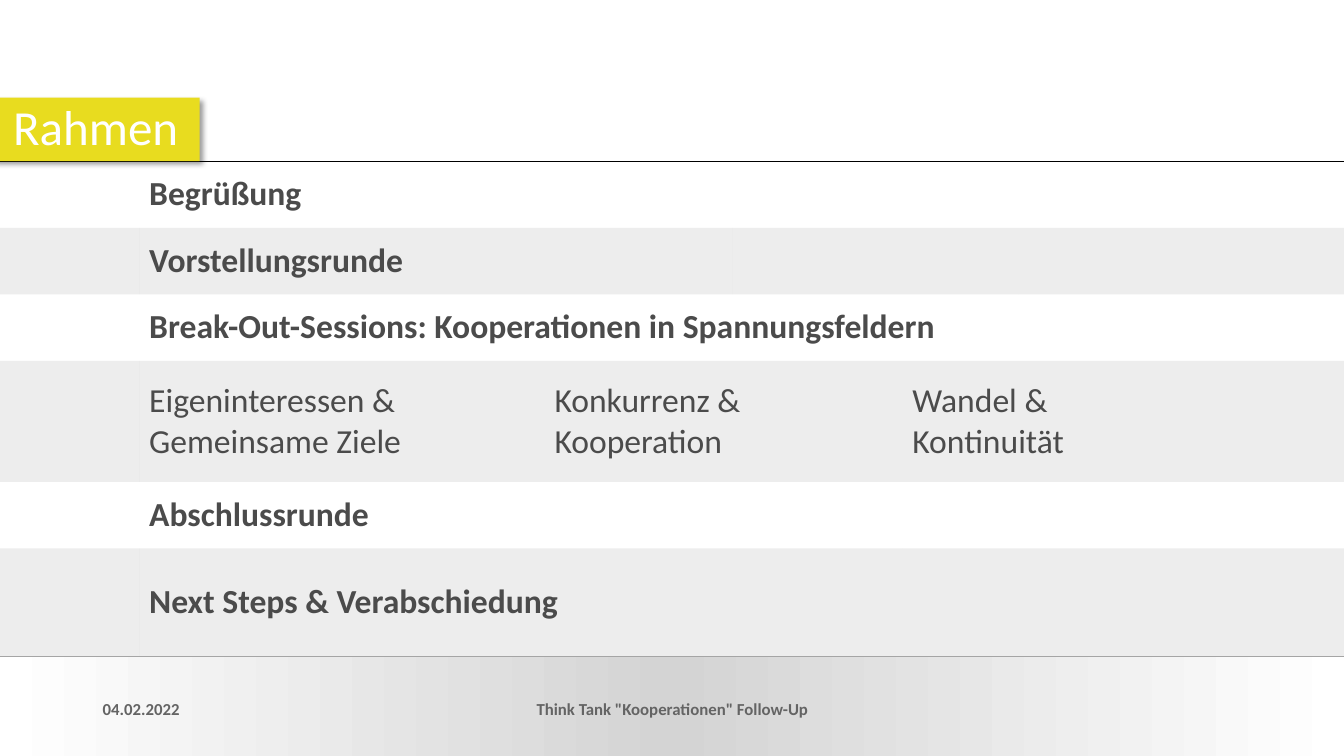
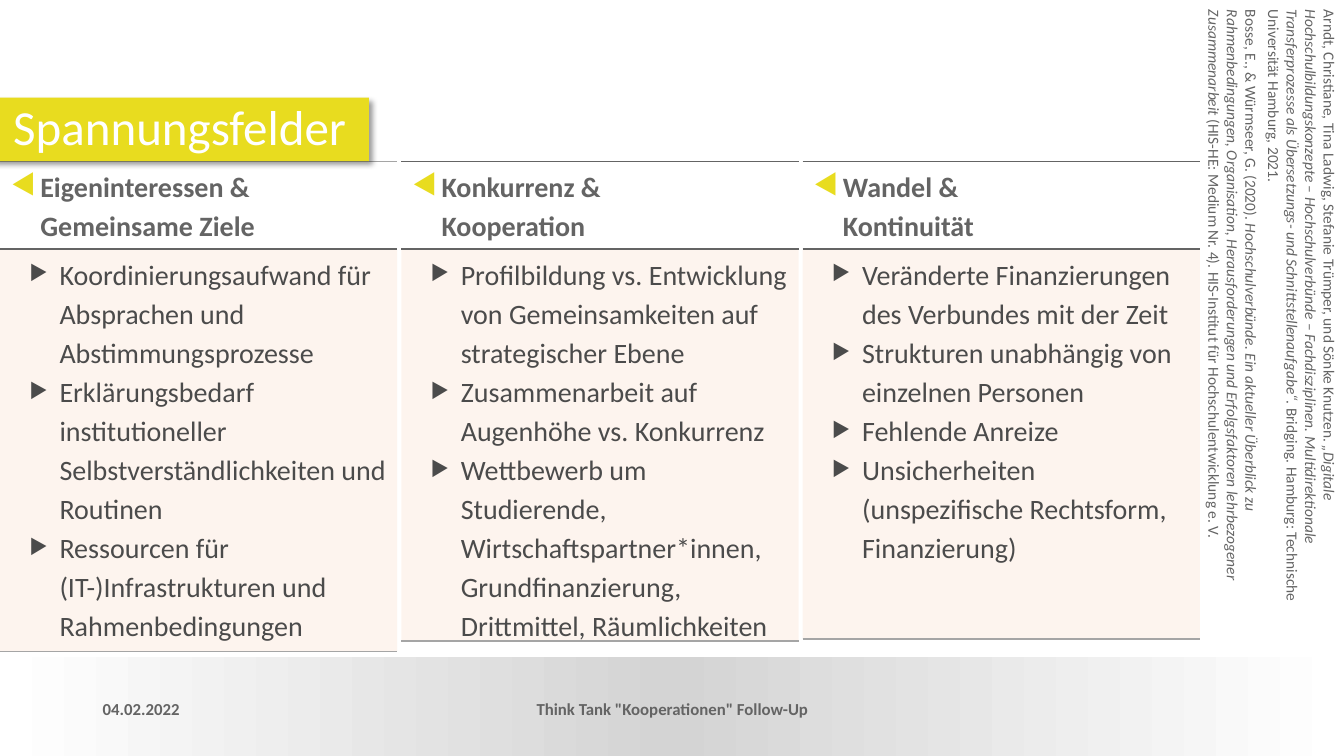
"""Build the two agenda and tension-field slides of the think tank follow-up."""
from lxml import etree
from pptx import Presentation
from pptx.dml.color import RGBColor
from pptx.enum.shapes import MSO_SHAPE
from pptx.enum.text import MSO_ANCHOR, PP_ALIGN
from pptx.oxml import parse_xml
from pptx.oxml.ns import nsdecls, qn
from pptx.util import Inches, Pt

RECTANGLE = MSO_SHAPE.RECTANGLE
MIDDLE, TOP = MSO_ANCHOR.MIDDLE, MSO_ANCHOR.TOP
LEFT, CENTER = PP_ALIGN.LEFT, PP_ALIGN.CENTER
BLANK_LAYOUT = 6
PLAIN_TABLE = "{2D5ABB26-0587-4C30-8999-92F81FD0307C}"

FONT = "Calibri"
WHITE, BLACK, YELLOW = "FFFFFF", "000000", "E8DC1F"
DARK, GREY, SILVER, PEACH = "4B4B4B", "646464", "A5A5A5", "F8CBAD"
BAND_GREY = "D4D4D4"
TINT = 20

DATE = "04.02.2022"
EVENT = 'Think Tank "Kooperationen" Follow-Up'

AGENDA_COLUMNS = [1.38, 4.02, 1.87, 1.68, 1.15, 3.23]
AGENDA = [
    (0.66, True, [1, 2, 2, 1], ["", "Begrüßung"]),
    (0.66, True, [1, 2, 2, 1], ["", "Vorstellungsrunde"]),
    (0.66, True, [1, 5], ["", "Break-Out-Sessions: Kooperationen in Spannungsfeldern"]),
    (1.2, False, [1, 1, 2, 2], ["", "Eigeninteressen & Gemeinsame Ziele",
                                "Konkurrenz & Kooperation", "Wandel &\nKontinuität"]),
    (0.66, True, [1, 1, 2, 2], ["", "Abschlussrunde"]),
    (1.07, True, [1, 3, 2], ["", "Next Steps & Verabschiedung"]),
]

FIELDS = [
    ("Eigeninteressen & Gemeinsame Ziele", SILVER, 3.99, [
        "Koordinierungsaufwand für Absprachen und Abstimmungsprozesse",
        "Erklärungsbedarf institutioneller Selbstverständlichkeiten und Routinen",
        "Ressourcen für (IT-)Infrastrukturen und Rahmenbedingungen"]),
    ("Konkurrenz &\nKooperation", GREY, 3.89, [
        "Profilbildung vs. Entwicklung von Gemeinsamkeiten auf strategischer Ebene",
        "Zusammenarbeit auf Augenhöhe vs. Konkurrenz",
        "Wettbewerb um Studierende, Wirtschaftspartner*innen, Grundfinanzierung, "
        "Drittmittel, Räumlichkeiten"]),
    ("Wandel &\nKontinuität", GREY, 3.87, [
        "Veränderte Finanzierungen des Verbundes mit der Zeit",
        "Strukturen unabhängig von einzelnen Personen",
        "Fehlende Anreize",
        "Unsicherheiten (unspezifische Rechtsform, Finanzierung)"]),
]

REFERENCES = [
    [("Arndt, Christiane, Tina Ladwig, Stefanie Trümper, und Sönke Knutzen. ", False),
     ("„Digitale Hochschulbildungskonzepte – Hochschulverbünde – Fachdisziplinen. "
      "Multidirektionale Transferprozesse als Übersetzungs- und Schnittstellenaufgabe“", True),
     (". Bridging. Hamburg: Technische Universität Hamburg, 2021.", False)],
    [("Bosse, E., & Würmseer, G. (2020). ", False),
     ("Hochschulverbünde. Ein aktueller Überblick zu Rahmenbedingungen, Organisation, "
      "Herausforderungen und Erfolgsfaktoren lehrbezogener Zusammenarbeit", True),
     (" (HIS-HE: Medium Nr. 4). HIS-Institut für Hochschulentwicklung e. V.", False)],
]


def rgb(value):
    return RGBColor.from_string(value)


def write(paragraph, text, size, color, bold=False, italic=False):
    for number, line in enumerate(text.split("\n")):
        if number:
            paragraph.add_line_break()
        run = paragraph.add_run()
        run.text = line
        font = run.font
        font.name, font.size = FONT, Pt(size)
        font.bold, font.italic = bold, italic
        font.color.rgb = rgb(color)


def set_bullet(paragraph, symbol, color, percent, indent):
    properties = paragraph._p.get_or_add_pPr()
    properties.set("marL", str(Inches(indent)))
    properties.set("indent", str(Inches(-0.3)))
    bullet_color = etree.SubElement(properties, qn("a:buClr"))
    etree.SubElement(bullet_color, qn("a:srgbClr")).set("val", color)
    etree.SubElement(properties, qn("a:buSzPct")).set("val", str(percent * 1000))
    etree.SubElement(properties, qn("a:buChar")).set("char", symbol)
    paragraph.line_spacing = 1.14


def style_cell(cell, tint=None, top=None, bottom=None):
    properties = cell._tc.get_or_add_tcPr()
    for tag, color in (("lnT", top), ("lnB", bottom)):
        if color:
            properties.append(parse_xml(
                f'<a:{tag} {nsdecls("a")} w="12700"><a:solidFill>'
                f'<a:srgbClr val="{color}"/></a:solidFill></a:{tag}>'))
    if tint:
        cell.fill.solid()
        cell.fill.fore_color.rgb = rgb(tint)
        color = properties.find(qn("a:solidFill")).find(qn("a:srgbClr"))
        etree.SubElement(color, qn("a:alpha")).set("val", str(TINT * 1000))
    else:
        cell.fill.background()


class Deck:
    def __init__(self):
        self.presentation = Presentation()
        self.presentation.slide_width = Inches(13.33)
        self.presentation.slide_height = Inches(7.5)
        self.slide = None

    def new_slide(self):
        layout = self.presentation.slide_layouts[BLANK_LAYOUT]
        self.slide = self.presentation.slides.add_slide(layout)
        self.footer()

    def rectangle(self, left, top, width, height):
        shape = self.slide.shapes.add_shape(
            RECTANGLE, Inches(left), Inches(top), Inches(width), Inches(height))
        shape.shadow.inherit = False
        shape.line.fill.background()
        return shape

    def text_box(self, left, top, width, height, anchor=TOP):
        box = self.slide.shapes.add_textbox(
            Inches(left), Inches(top), Inches(width), Inches(height))
        box.text_frame.word_wrap = True
        box.text_frame.vertical_anchor = anchor
        return box

    def footer(self):
        band = self.rectangle(0, 6.52, 13.33, 0.98)
        band.fill.gradient()
        band.fill.gradient_angle = 0
        stops = band._element.spPr.find(qn("a:gradFill")).find(qn("a:gsLst"))
        stops.clear()
        for position, color in ((0, WHITE), (50, BAND_GREY), (100, WHITE)):
            stop = etree.SubElement(stops, qn("a:gs"))
            stop.set("pos", str(position * 1000))
            etree.SubElement(stop, qn("a:srgbClr")).set("val", color)
        for text, left, width, align in ((DATE, 0.92, 3, LEFT), (EVENT, 4.8, 3.74, CENTER)):
            paragraph = self.text_box(left, 6.83, width, 0.4, MIDDLE).text_frame.paragraphs[0]
            paragraph.alignment = align
            write(paragraph, text, 12, GREY, bold=True)

    def title(self, text, width):
        label = self.rectangle(-0.07, 0.97, width, 0.63)
        label.fill.solid()
        label.fill.fore_color.rgb = rgb(YELLOW)
        label._element.spPr.find(qn("a:effectLst")).append(parse_xml(
            f'<a:outerShdw {nsdecls("a")} blurRad="50800" dist="38100" dir="2700000" '
            f'algn="tl" rotWithShape="0"><a:srgbClr val="{BLACK}">'
            '<a:alpha val="40000"/></a:srgbClr></a:outerShdw>'))
        frame = label.text_frame
        frame.word_wrap = True
        frame.vertical_anchor = MIDDLE
        frame.margin_left, frame.margin_right = Inches(0.2), Inches(0.1)
        paragraph = frame.paragraphs[0]
        paragraph.alignment = LEFT
        paragraph.line_spacing = 0.9
        write(paragraph, text, 35, WHITE)

    def table(self, left, top, widths, heights):
        frame = self.slide.shapes.add_table(
            len(heights), len(widths), Inches(left), Inches(top),
            Inches(sum(widths)), Inches(sum(heights)))
        next(frame._element.iter(qn("a:tableStyleId"))).text = PLAIN_TABLE
        table = frame.table
        table.first_row = table.horz_banding = False
        for column, width in zip(table.columns, widths):
            column.width = Inches(width)
        for row, height in zip(table.rows, heights):
            row.height = Inches(height)
        return table

    def agenda(self, rows):
        table = self.table(0, 1.6, AGENDA_COLUMNS, [row[0] for row in rows])
        last = len(rows) - 1
        for index, (_, bold, spans, texts) in enumerate(rows):
            for cell in table.rows[index].cells:
                style_cell(cell, SILVER if index % 2 else None,
                           BLACK if index == 0 else None,
                           SILVER if index == last else None)
            for number, span in enumerate(spans):
                start = sum(spans[:number])
                cell = table.cell(index, start)
                if span > 1:
                    cell.merge(table.cell(index, start + span - 1))
                cell.vertical_anchor = MIDDLE
                if number < len(texts) and texts[number]:
                    write(cell.text_frame.paragraphs[0], texts[number], 24, DARK, bold)

    def field(self, left, heading, top_color, body_height, points):
        table = self.table(left, 1.6, [3.94], [0.87, body_height])
        header, body = table.cell(0, 0), table.cell(1, 0)
        style_cell(header, top=top_color, bottom=GREY)
        style_cell(body, PEACH, GREY, SILVER)
        body.margin_bottom = 0
        paragraph = header.text_frame.paragraphs[0]
        set_bullet(paragraph, "◀", YELLOW, 100, 0.3)
        write(paragraph, heading, 20, GREY, bold=True)
        for number, point in enumerate(points):
            frame = body.text_frame
            paragraph = frame.add_paragraph() if number else frame.paragraphs[0]
            paragraph.level = 1
            set_bullet(paragraph, "▶", DARK, 75, 0.49)
            write(paragraph, point, 20, DARK)

    def references(self, entries):
        box = self.text_box(9.36, 2.53, 6.5, 1.44)
        box.rotation = 90
        frame = box.text_frame
        for number, entry in enumerate(entries):
            paragraph = frame.add_paragraph() if number else frame.paragraphs[0]
            paragraph.space_after = Pt(0 if number else 3)
            for text, italic in entry:
                write(paragraph, text, 11, GREY, italic=italic)


def main():
    deck = Deck()
    deck.new_slide()
    deck.agenda(AGENDA)
    deck.title("Rahmen", 2.05)

    deck.new_slide()
    for index, field in enumerate(FIELDS):
        deck.field(index * 3.98, *field)
    deck.title("Spannungsfelder", 3.73)
    deck.references(REFERENCES)
    deck.presentation.save("out.pptx")


if __name__ == "__main__":
    main()
